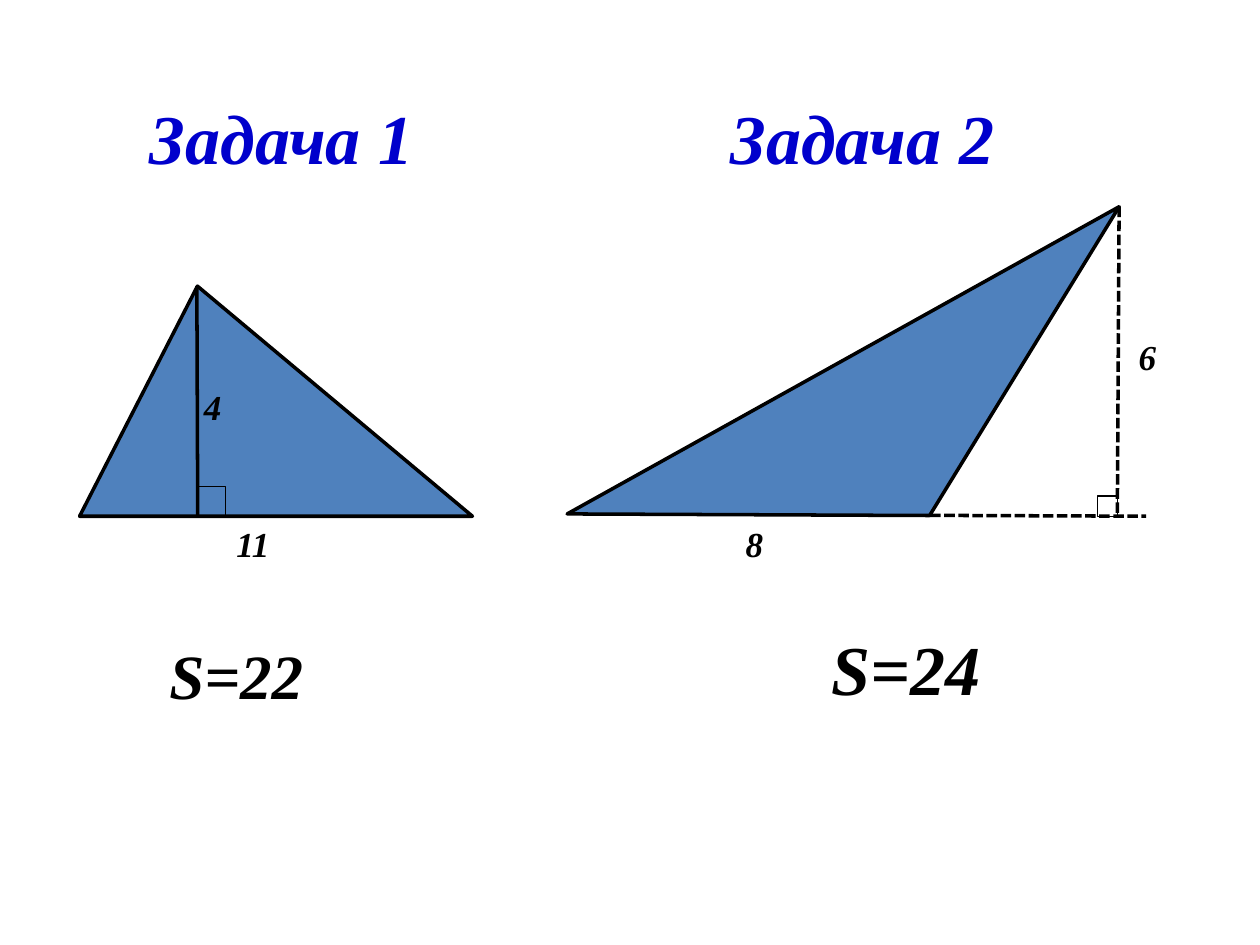
from dataclasses import dataclass

from lxml import etree
from pptx import Presentation
from pptx import util as u
from pptx.dml.color import RGBColor
from pptx.enum import dml, shapes, text
from pptx.oxml.ns import qn


@dataclass(frozen=True)
class Theme:
    font: str = "Times New Roman"
    ink: RGBColor = RGBColor(0x00, 0x00, 0x00)
    heading: RGBColor = RGBColor(0x00, 0x00, 0xCC)
    fill: RGBColor = RGBColor(0x4F, 0x81, 0xBD)
    heading_size: float = 40
    length_size: float = 20
    side_width: float = 2
    angle_width: float = 0.75


THEME = Theme()


@dataclass(frozen=True)
class Box:
    left: float
    top: float
    width: float
    height: float

    def lengths(self) -> tuple:
        return tuple(u.Pt(v) for v in (self.left, self.top, self.width, self.height))


@dataclass(frozen=True)
class Segment:
    x1: float
    y1: float
    x2: float
    y2: float


@dataclass(frozen=True)
class Label:
    wording: str
    box: Box


@dataclass(frozen=True)
class Problem:
    heading: Label
    triangle: Box
    apex: float
    rotation: float
    segments: tuple[Segment, ...]
    dashed: bool
    right_angle: Box
    lengths: tuple[Label, ...]
    answer: Label
    answer_size: float


PROBLEMS = (
    Problem(
        heading=Label("Задача 1", Box(78.5, 50.5, 208, 55.5)),
        triangle=Box(45.5, 163.5, 224.5, 131.5),
        apex=0.3,
        rotation=0,
        segments=(Segment(112.5, 163.5, 113, 295),),
        dashed=False,
        right_angle=Box(113, 278, 16, 16.5),
        lengths=(
            Label("11", Box(128, 295, 50, 36.5)),
            Label("4", Box(109.5, 216.5, 50, 36.5)),
        ),
        answer=Label("S=22", Box(62, 360, 146, 51)),
        answer_size=36,
    ),
    Problem(
        heading=Label("Задача 2", Box(410.5, 50.5, 208, 55.5)),
        triangle=Box(326, 199.5, 361, 101.5),
        apex=0.5,
        rotation=150.9,
        segments=(
            Segment(531.5, 294.5, 655, 295),
            Segment(639.5, 118, 638.5, 295),
        ),
        dashed=True,
        right_angle=Box(627, 283.5, 11.5, 11.5),
        lengths=(
            Label("8", Box(419, 295, 39.5, 31.5)),
            Label("6", Box(643.5, 188, 39.5, 31.5)),
        ),
        answer=Label("S=24", Box(433.5, 354, 168.5, 55.5)),
        answer_size=40,
    ),
)


def write(holder, label: Label, size: float, color: RGBColor = THEME.ink,
          align: text.PP_ALIGN = text.PP_ALIGN.LEFT) -> None:
    """Place a text box or placeholder and fill it with one bold italic line."""
    holder.left, holder.top, holder.width, holder.height = label.box.lengths()
    frame = holder.text_frame
    frame.text = label.wording
    frame.word_wrap = True
    frame.auto_size = text.MSO_AUTO_SIZE.SHAPE_TO_FIT_TEXT
    frame.vertical_anchor = text.MSO_ANCHOR.TOP
    paragraph = frame.paragraphs[0]
    paragraph.alignment = align
    font = paragraph.runs[0].font
    font.name, font.size = THEME.font, u.Pt(size)
    font.bold = font.italic = True
    font.color.rgb = color


def add_label(canvas, label: Label, size: float, **style) -> None:
    write(canvas.add_textbox(*label.box.lengths()), label, size, **style)


def outline(item, width: float) -> None:
    item.line.color.rgb = THEME.ink
    item.line.width = u.Pt(width)


def add_triangle(canvas, problem: Problem) -> None:
    triangle = canvas.add_shape(
        shapes.MSO_SHAPE.ISOSCELES_TRIANGLE, *problem.triangle.lengths())
    triangle.adjustments[0] = problem.apex
    triangle.rotation = problem.rotation
    triangle.shadow.inherit = False
    triangle.fill.solid()
    triangle.fill.fore_color.rgb = THEME.fill
    outline(triangle, THEME.side_width)


def add_segment(canvas, segment: Segment, dashed: bool) -> None:
    ends = (segment.x1, segment.y1, segment.x2, segment.y2)
    line = canvas.add_connector(
        shapes.MSO_CONNECTOR.STRAIGHT, *(u.Pt(v) for v in ends))
    outline(line, THEME.side_width)
    if dashed:
        line.line.dash_style = dml.MSO_LINE.SQUARE_DOT
    etree.SubElement(line._element.spPr, qn("a:effectLst"))


def add_right_angle(canvas, box: Box) -> None:
    mark = canvas.add_shape(shapes.MSO_SHAPE.RECTANGLE, *box.lengths())
    mark.shadow.inherit = False
    mark.fill.background()
    outline(mark, THEME.angle_width)


def add_drawing(slide, problem: Problem) -> None:
    canvas = slide.shapes.add_group_shape().shapes
    add_triangle(canvas, problem)
    for segment in problem.segments:
        add_segment(canvas, segment, problem.dashed)
    for length in problem.lengths:
        add_label(canvas, length, THEME.length_size)
    add_right_angle(canvas, problem.right_angle)


def main() -> None:
    deck = Presentation()
    deck.slide_width, deck.slide_height = u.Pt(720), u.Pt(540)
    slide = deck.slides.add_slide(deck.slide_layouts.get_by_name("Title Only"))

    first, second = PROBLEMS
    write(slide.shapes.title, first.heading, THEME.heading_size, THEME.heading)
    add_label(slide.shapes, second.heading, THEME.heading_size, color=THEME.heading)
    for problem in PROBLEMS:
        add_drawing(slide, problem)
        add_label(slide.shapes, problem.answer, problem.answer_size,
                  align=text.PP_ALIGN.CENTER)
    deck.save("out.pptx")


if __name__ == "__main__":
    main()
